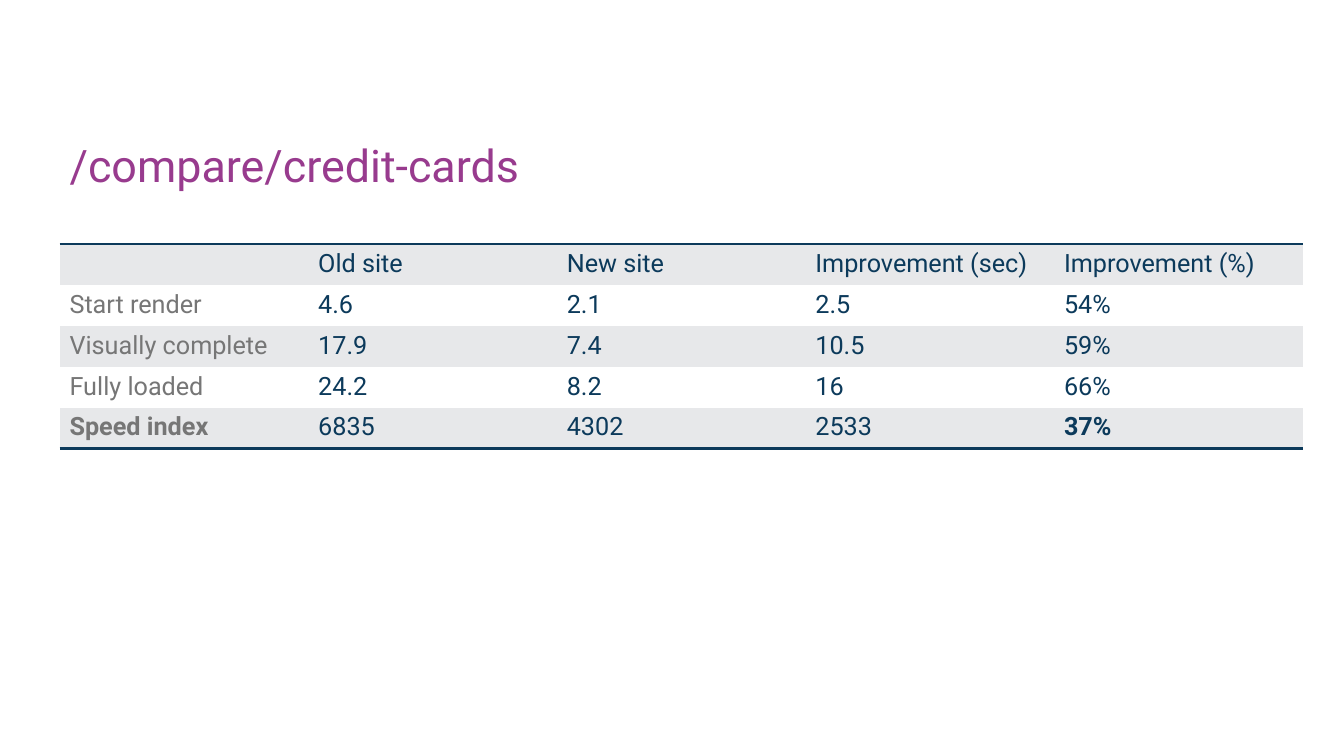
from lxml.etree import SubElement
from pptx import Presentation
from pptx.dml.color import RGBColor
from pptx.enum.text import MSO_ANCHOR, MSO_AUTO_SIZE, PP_ALIGN
from pptx.oxml import parse_xml
from pptx.oxml.ns import qn
from pptx.util import Inches, Pt

PURPLE = RGBColor(0x98, 0x3B, 0x8E)
NAVY = RGBColor(0x0C, 0x3A, 0x5B)
GREY = RGBColor(0x76, 0x76, 0x76)
BAND = RGBColor(0xE7, 0xE8, 0xEA)
WHITE = RGBColor(0xFF, 0xFF, 0xFF)
PLAIN_TABLE = "{2D5ABB26-0587-4C30-8999-92F81FD0307C}"

TIMINGS = [
    ["", "Old site", "New site", "Improvement (sec)", "Improvement (%)"],
    ["Start render", "4.6", "2.1", "2.5", "54%"],
    ["Visually complete", "17.9", "7.4", "10.5", "59%"],
    ["Fully loaded", "24.2", "8.2", "16", "66%"],
    ["Speed index", "6835", "4302", "2533", "37%"],
]
BOLD_TEXTS = {"Speed index", "37%"}


class TimingPage:
    """Hold the text style and the current slide, and add elements to it."""

    font_name = "Roboto"
    left, width = 0.59, 12.33

    def __init__(self, deck):
        self.page = deck.slides.add_slide(deck.slide_layouts[5])

    def style(self, para, size, color, bold=False):
        for span in para.runs:
            span.font.name = self.font_name
            span.font.size = Pt(size)
            span.font.bold = bold
            span.font.color.rgb = color

    def add_title(self, text, top, height):
        title = self.page.shapes.title
        title.left, title.top = Inches(self.left), Inches(top)
        title.width, title.height = Inches(self.width), Inches(height)
        frame = title.text_frame
        frame.text = text
        frame.word_wrap = True
        frame.auto_size = MSO_AUTO_SIZE.NONE
        frame.vertical_anchor = MSO_ANCHOR.BOTTOM
        para = frame.paragraphs[0]
        para.alignment = PP_ALIGN.LEFT
        para.line_spacing = 0.9
        self.style(para, 32, PURPLE)

    def add_border(self, cell, side):
        properties = cell._tc.get_or_add_tcPr()
        line = parse_xml(
            '<a:%s xmlns:a="http://schemas.openxmlformats.org/drawingml/2006/main" w="%d"/>'
            % (side, Pt(2))
        )
        fill = SubElement(line, qn("a:solidFill"))
        SubElement(fill, qn("a:srgbClr"), val=str(NAVY))
        properties.insert(0, line)

    def add_table(self, rows, top, height):
        frame = self.page.shapes.add_table(
            len(rows), len(rows[0]), Inches(self.left), Inches(top),
            Inches(self.width), Inches(height),
        )
        table = frame.table
        table._tbl.tblPr.find(qn("a:tableStyleId")).text = PLAIN_TABLE
        for row_index, texts in enumerate(rows):
            for column_index, text in enumerate(texts):
                cell = table.cell(row_index, column_index)
                cell.text = text
                cell.fill.solid()
                cell.fill.fore_color.rgb = WHITE if row_index % 2 else BAND
                color = NAVY if column_index else GREY
                self.style(cell.text_frame.paragraphs[0], 18, color, text in BOLD_TEXTS)
                if row_index == 0:
                    self.add_border(cell, "lnT")
                if row_index == len(rows) - 1:
                    self.add_border(cell, "lnB")


def main():
    deck = Presentation()
    deck.slide_width, deck.slide_height = Inches(13.33), Inches(7.5)
    page = TimingPage(deck)
    page.add_title("/compare/credit-cards", 1.25, 0.71)
    page.add_table(TIMINGS, 2.42, 2.03)
    deck.save("out.pptx")


if __name__ == "__main__":
    main()
